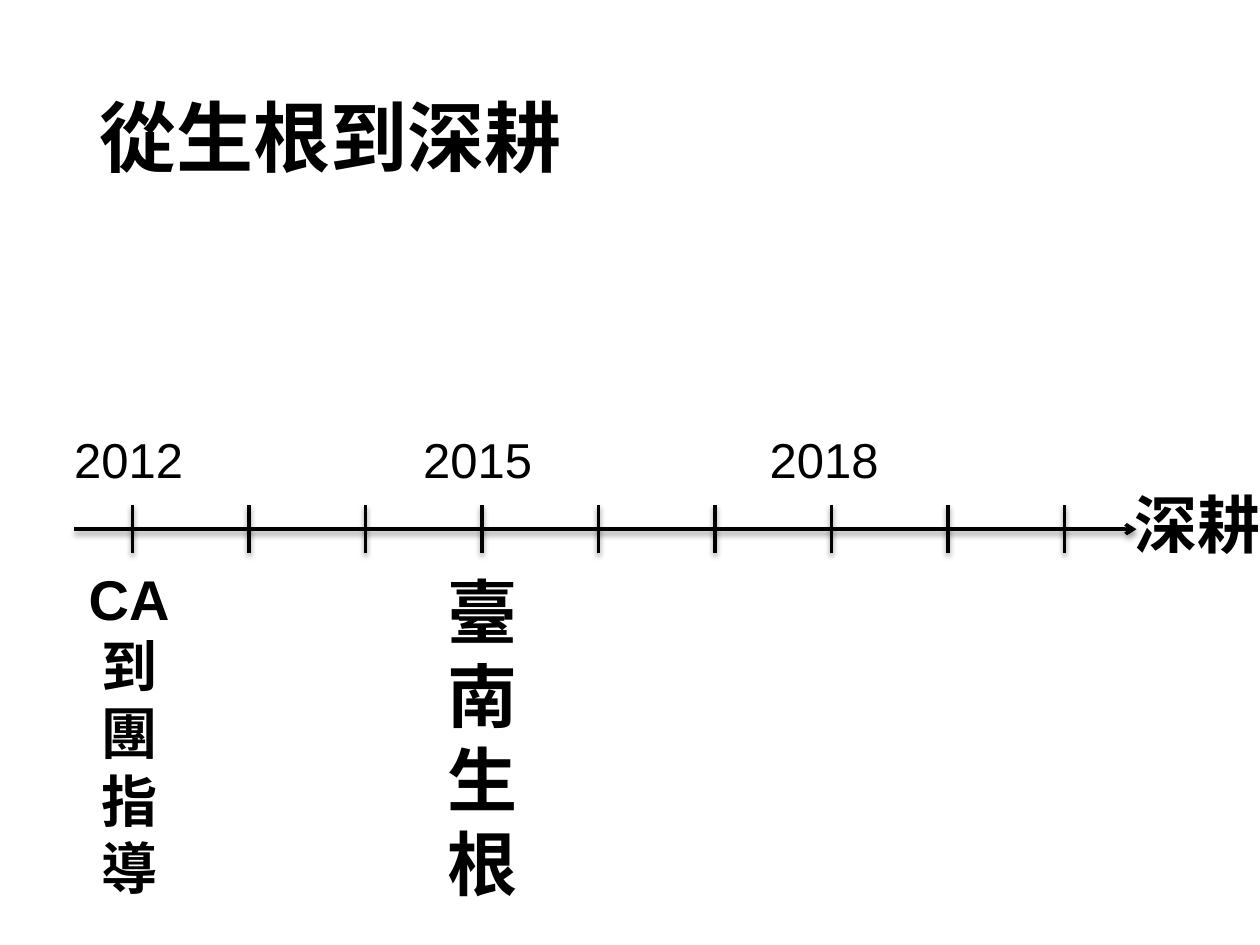
from lxml import etree
from pptx import Presentation
from pptx.dml.color import RGBColor
from pptx.enum.shapes import MSO_CONNECTOR
from pptx.enum.text import MSO_ANCHOR, PP_ALIGN
from pptx.oxml import parse_xml
from pptx.oxml.ns import nsdecls, qn
from pptx.util import Inches, Pt

BLACK = RGBColor(0, 0, 0)
LATIN_FONT, CJK_FONT = "Arial", "Noto Sans CJK SC"
STRAIGHT = MSO_CONNECTOR.STRAIGHT
LEFT, CENTER = PP_ALIGN.LEFT, PP_ALIGN.CENTER
TOP, MIDDLE = MSO_ANCHOR.TOP, MSO_ANCHOR.MIDDLE

AXIS_Y = 4.2
TICK_START, TICK_GAP, TICK_COUNT, TICK_HALF = 1.05, 0.925, 9, 0.19
SHADOW = (
    f'<a:effectLst {nsdecls("a")}><a:outerShdw blurRad="40000" dist="20000" '
    'dir="5400000" rotWithShape="0"><a:srgbClr val="000000">'
    '<a:alpha val="38000"/></a:srgbClr></a:outerShdw></a:effectLst>'
)

prs = Presentation()
prs.slide_width, prs.slide_height = Inches(10), Inches(7.5)
slide = prs.slides.add_slide(prs.slide_layouts[6])


def add_line(x1, y1, x2, y2):
    """Draw a black timeline stroke with a soft shadow below it."""
    line = slide.shapes.add_connector(
        STRAIGHT, Inches(x1), Inches(y1), Inches(x2), Inches(y2))
    line.line.color.rgb = BLACK
    line.line.width = Pt(2)
    line._element.spPr.append(parse_xml(SHADOW))
    return line


def add_text(text, box, size, font=LATIN_FONT, bold=False, wrap=True,
             align=LEFT, anchor=TOP, spacing=None):
    frame = slide.shapes.add_textbox(*map(Inches, box)).text_frame
    frame.word_wrap = wrap
    frame.vertical_anchor = anchor
    paragraph = frame.paragraphs[0]
    paragraph.alignment = align
    paragraph.line_spacing = spacing
    run = paragraph.add_run()
    run.text = text
    for name, value in dict(name=font, size=Pt(size), bold=bold).items():
        setattr(run.font, name, value)
    run.font.color.rgb = BLACK
    if font == CJK_FONT:
        east_asian = etree.SubElement(run.font._element, qn("a:ea"))
        east_asian.set("typeface", font)


add_text("從生根到深耕", (0.69, 0.4, 8.62, 1.45), 44, CJK_FONT, bold=True,
         anchor=MIDDLE, spacing=0.9)

axis = add_line(0.59, AXIS_Y, 9.02, AXIS_Y)
arrowhead = etree.SubElement(axis.line._get_or_add_ln(), qn("a:tailEnd"))
arrowhead.set("type", "arrow")
for i in range(TICK_COUNT):
    x = TICK_START + i * TICK_GAP
    add_line(x, AXIS_Y - TICK_HALF, x, AXIS_Y + TICK_HALF)

for year, left in (("2012", 0.49), ("2015", 3.26), ("2018", 6.01)):
    add_text(year, (left, 3.36, 1.18, 0.57), 28)

add_text("CA到團指導", (0.52, 4.43, 1.01, 2.79), 32, bold=True, align=CENTER)
add_text("臺南生根", (3.45, 4.46, 0.51, 2.79), 40, bold=True)
add_text("深耕", (8.91, 3.8, 1.2, 0.71), 36, CJK_FONT, bold=True, wrap=False)

prs.save("out.pptx")
